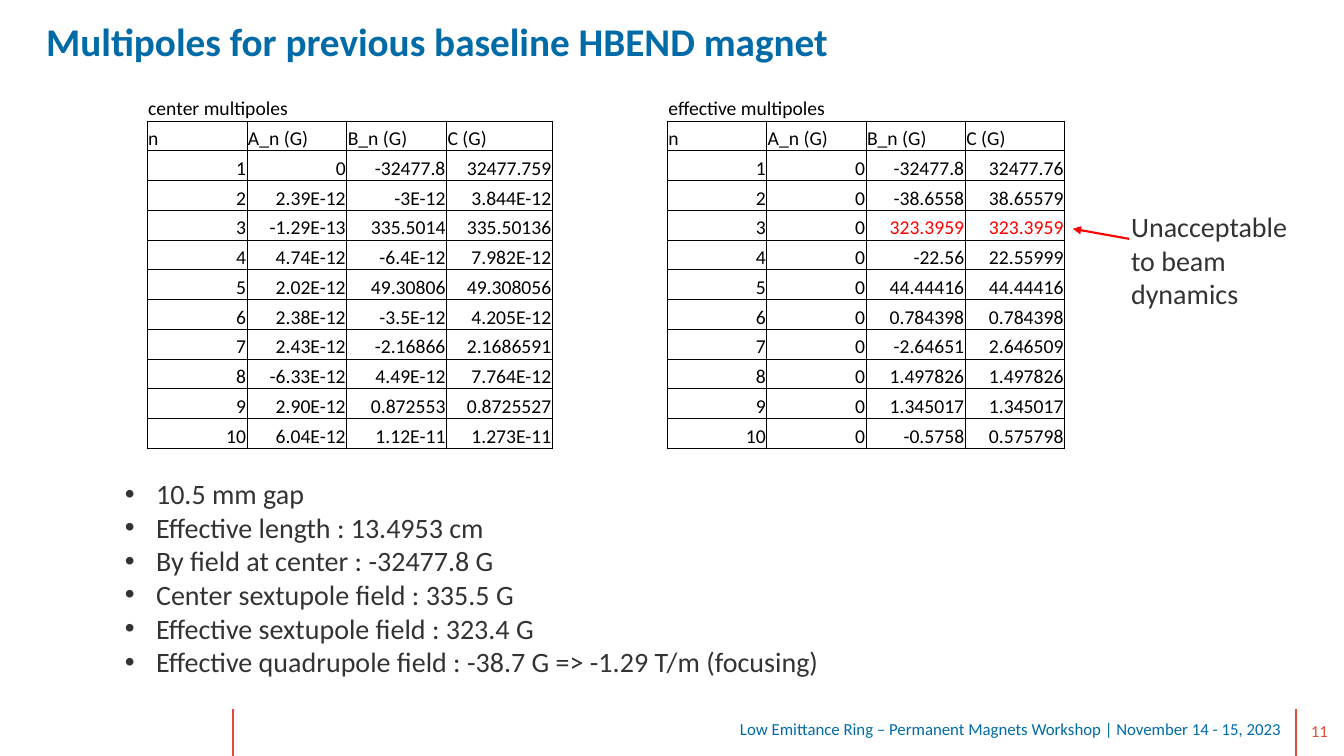
from dataclasses import dataclass

import pptx
import pptx.dml.color
import pptx.enum.shapes
import pptx.enum.text
import pptx.oxml
import pptx.oxml.ns
import pptx.util
from pptx.util import Inches

ALIGN = pptx.enum.text.PP_ALIGN
ANCHOR = pptx.enum.text.MSO_ANCHOR


@dataclass(frozen=True)
class Theme:
    font: str = "Calibri"
    blue: str = "006BA6"
    orange: str = "E04E38"
    body: str = "313335"
    black: str = "000000"
    alert: str = "FF0000"
    title_size: int = 28
    body_size: int = 20
    table_size: int = 14
    footer_size: int = 12
    line_width: float = 1.5
    border_width: float = 0.5


THEME = Theme()

HEADINGS = ["n", "A_n (G)", "B_n (G)", "C (G)"]
CENTER_MULTIPOLES = [
    ("0", "-32477.8", "32477.759"),
    ("2.39E-12", "-3E-12", "3.844E-12"),
    ("-1.29E-13", "335.5014", "335.50136"),
    ("4.74E-12", "-6.4E-12", "7.982E-12"),
    ("2.02E-12", "49.30806", "49.308056"),
    ("2.38E-12", "-3.5E-12", "4.205E-12"),
    ("2.43E-12", "-2.16866", "2.1686591"),
    ("-6.33E-12", "4.49E-12", "7.764E-12"),
    ("2.90E-12", "0.872553", "0.8725527"),
    ("6.04E-12", "1.12E-11", "1.273E-11"),
]
EFFECTIVE_MULTIPOLES = [
    ("0", "-32477.8", "32477.76"),
    ("0", "-38.6558", "38.65579"),
    ("0", "323.3959", "323.3959"),
    ("0", "-22.56", "22.55999"),
    ("0", "44.44416", "44.44416"),
    ("0", "0.784398", "0.784398"),
    ("0", "-2.64651", "2.646509"),
    ("0", "1.497826", "1.497826"),
    ("0", "1.345017", "1.345017"),
    ("0", "-0.5758", "0.575798"),
]
MAGNET_FACTS = [
    "10.5 mm gap",
    "Effective length : 13.4953 cm",
    "By field at center : -32477.8 G",
    "Center sextupole field : 335.5 G",
    "Effective sextupole field : 323.4 G",
    "Effective quadrupole field : -38.7 G => -1.29 T/m (focusing)",
]


def rgb(color):
    return pptx.dml.color.RGBColor.from_string(color)


def add_xml(parent, tag, **attributes):
    child = pptx.oxml.parse_xml(f"<a:{tag} {pptx.oxml.ns.nsdecls('a')}/>")
    for key, value in attributes.items():
        child.set(key, str(value))
    parent.append(child)
    return child


def style_runs(paragraph, size, color, bold=False):
    for run in paragraph.runs:
        run.font.name = THEME.font
        run.font.size = pptx.util.Pt(size)
        run.font.bold = bold
        run.font.color.rgb = rgb(color)


def add_text(slide, box, lines, size, color, bold=False, align=ALIGN.LEFT,
             anchor=ANCHOR.TOP, wrap=True, bulleted=False):
    frame = slide.shapes.add_textbox(*map(Inches, box)).text_frame
    frame.word_wrap = wrap
    frame.vertical_anchor = anchor
    frame.text = "\n".join(lines)
    for paragraph in frame.paragraphs:
        paragraph.alignment = align
        if bulleted:
            properties = paragraph._p.get_or_add_pPr()
            properties.set("marL", str(Inches(0.31)))
            properties.set("indent", str(Inches(-0.31)))
            add_xml(properties, "buFont", typeface="Arial")
            add_xml(properties, "buChar", char="•")
        style_runs(paragraph, size, color, bold)
    return frame


def add_line(slide, start, end, color, arrow=False):
    line = slide.shapes.add_connector(
        pptx.enum.shapes.MSO_CONNECTOR.STRAIGHT,
        *map(Inches, start), *map(Inches, end))
    line.line.color.rgb = rgb(color)
    line.line.width = pptx.util.Pt(THEME.line_width)
    if arrow:
        add_xml(line.line._ln, "tailEnd", type="triangle")
    add_xml(line._element.spPr, "effectLst")


def set_borders(cell, visible_sides):
    properties = cell._tc.get_or_add_tcPr()
    for side in "LRTB":
        visible = side in visible_sides
        width = pptx.util.Pt(THEME.border_width) if visible else 0
        border = add_xml(properties, f"ln{side}", w=int(width))
        if visible:
            add_xml(add_xml(border, "solidFill"), "srgbClr", val=THEME.black)
        else:
            add_xml(border, "noFill")


def fill_cell(cell, text, align, color, borders):
    set_borders(cell, borders)
    cell.fill.background()
    cell.margin_left = cell.margin_right = cell.margin_top = Inches(0.01)
    cell.margin_bottom = 0
    cell.vertical_anchor = ANCHOR.BOTTOM
    paragraph = cell.text_frame.paragraphs[0]
    paragraph.alignment = align
    if text:
        paragraph.text = text
        style_runs(paragraph, THEME.table_size, color)
    else:
        add_xml(paragraph._p, "endParaRPr", sz=THEME.table_size * 100)


def add_multipole_table(slide, left, column_widths, caption, caption_span,
                        coefficients, alert_cells=()):
    caption_height, height = 0.29, 3.54
    captions = [caption] + [""] * (len(HEADINGS) - 1)
    numbered = [(str(n), *values) for n, values in enumerate(coefficients, 1)]
    rows = [captions, HEADINGS, *numbered]
    table = slide.shapes.add_table(
        len(rows), len(HEADINGS), Inches(left), Inches(0.91),
        Inches(sum(column_widths)), Inches(height)).table
    table.first_row = table.horz_banding = False
    for column, width in zip(table.columns, column_widths):
        column.width = Inches(width)
    for row in table.rows:
        row.height = Inches((height - caption_height) / (len(rows) - 1))
    table.rows[0].height = Inches(caption_height)
    for r, values in enumerate(rows):
        for c, value in enumerate(values):
            fill_cell(table.cell(r, c), value,
                      ALIGN.RIGHT if r > 1 else ALIGN.LEFT,
                      THEME.alert if (r, c) in alert_cells else THEME.black,
                      "LRTB" if r else "B")
    table.cell(0, 0).merge(table.cell(0, caption_span - 1))


def add_footer(slide):
    for x in (12.85, 2.31):
        add_line(slide, (x, 7.03), (x, 7.5), THEME.orange)
    add_text(slide, (12.79, 7.05, 0.59, 0.4), ["11"], THEME.footer_size,
             THEME.orange, align=ALIGN.CENTER, anchor=ANCHOR.MIDDLE)
    add_text(slide, (7.17, 7.03, 5.64, 0.4),
             ["Low Emittance Ring – Permanent Magnets Workshop | November 14 - 15, 2023"],
             THEME.footer_size, THEME.blue, align=ALIGN.RIGHT,
             anchor=ANCHOR.MIDDLE, wrap=False)


def main():
    deck = pptx.Presentation()
    deck.slide_width, deck.slide_height = Inches(13.33), Inches(7.5)
    slide = deck.slides.add_slide(deck.slide_layouts[6])

    # Title
    add_text(slide, (0.36, 0.12, 11.14, 0.57),
             ["Multipoles for previous baseline HBEND magnet"],
             THEME.title_size, THEME.blue, bold=True)

    # Multipole tables, with the sextupole term in red
    add_multipole_table(slide, 1.46, [0.99, 0.99, 0.99, 1.05],
                        "center multipoles", 2, CENTER_MULTIPOLES)
    add_multipole_table(slide, 6.62, [3.94 / 4] * 4, "effective multipoles", 3,
                        EFFECTIVE_MULTIPOLES, alert_cells={(4, 2), (4, 3)})

    # Remark on the sextupole term
    add_text(slide, (11.12, 2.03, 1.97, 1.11), ["Unacceptable to beam dynamics"],
             THEME.body_size, THEME.body)
    add_line(slide, (11.2, 2.37), (10.64, 2.27), THEME.alert, arrow=True)

    # Magnet facts
    add_text(slide, (1.14, 4.68, 8.1, 2.12), MAGNET_FACTS, THEME.body_size,
             THEME.body, bulleted=True)

    add_footer(slide)
    deck.save("out.pptx")


if __name__ == "__main__":
    main()
